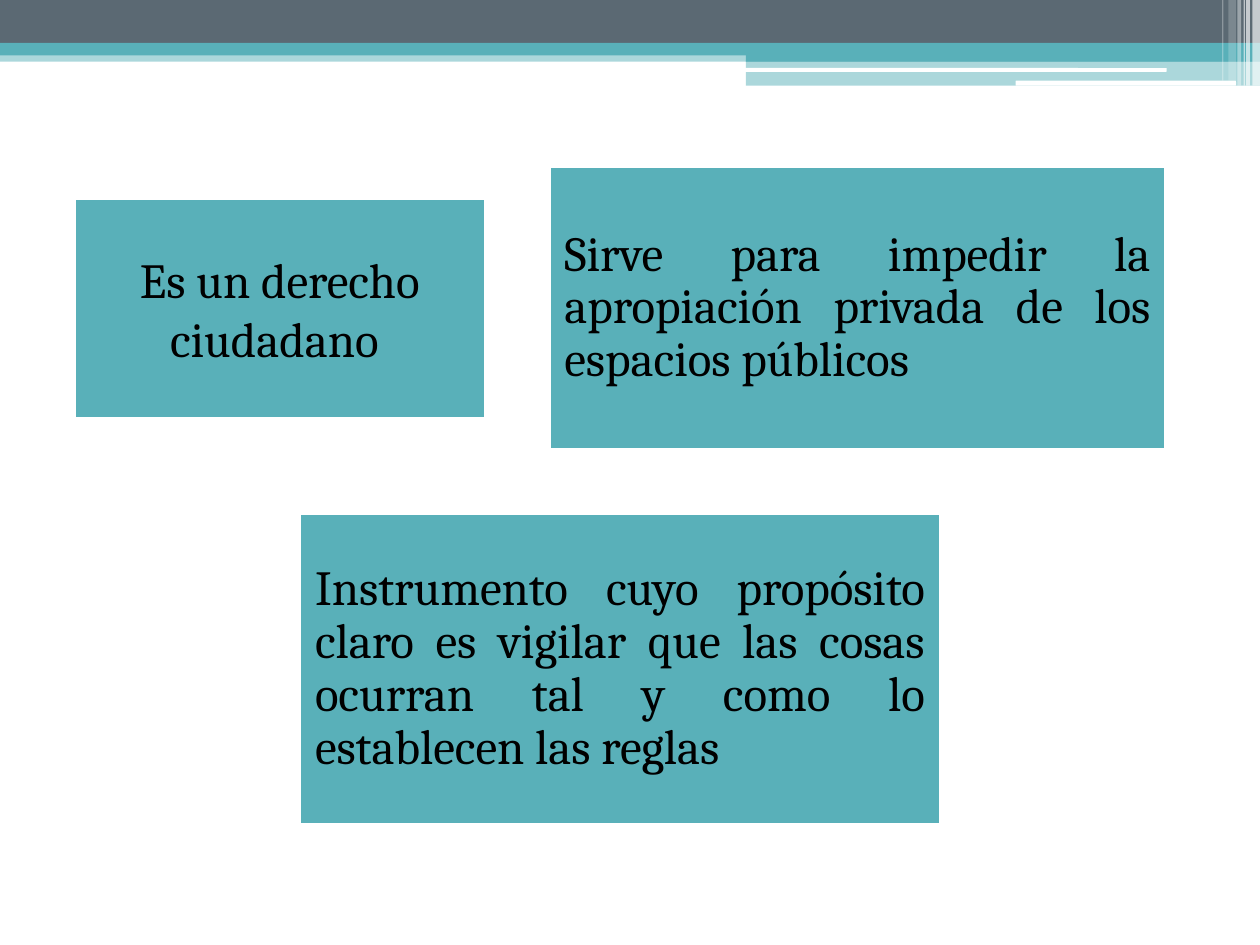
from lxml import etree
from pptx import Presentation
from pptx.dml.color import RGBColor
from pptx.enum.shapes import MSO_SHAPE
from pptx.enum.text import MSO_ANCHOR, PP_ALIGN
from pptx.oxml.ns import qn
from pptx.util import Inches, Pt

RECT, ROUNDED = MSO_SHAPE.RECTANGLE, MSO_SHAPE.ROUNDED_RECTANGLE
CENTER, JUSTIFY = PP_ALIGN.CENTER, PP_ALIGN.JUSTIFY
MIDDLE = MSO_ANCHOR.MIDDLE

TEAL = RGBColor(0x59, 0xB0, 0xB9)
SLATE = RGBColor(0x5B, 0x69, 0x73)
WHITE = RGBColor(0xFF, 0xFF, 0xFF)
BLACK = RGBColor(0x00, 0x00, 0x00)

# Header bands: preset, left, top, width, height, colour, opacity in percent
BANDS = [
    (RECT, 0, 0.4, 10, 0.09, TEAL, 50),
    (RECT, 0, 0, 10, 0.34, SLATE, 100),
    (RECT, 0, 0.34, 10, 0.1, TEAL, 100),
    (RECT, 5.92, 0.39, 4.08, 0.1, TEAL, 100),
    (RECT, 5.92, 0.48, 4.08, 0.2, TEAL, 50),
    (ROUNDED, 5.91, 0.54, 3.35, 0.03, WHITE, 100),
    (ROUNDED, 8.06, 0.64, 1.75, 0.04, WHITE, 100),
]

# Light stripes at the right edge: left, width, height, opacity in percent
STRIPES = [
    (9.94, 0.06, 0.68, 65),
    (9.89, 0.03, 0.68, 65),
    (9.87, 0.01, 0.68, 60),
    (9.82, 0.03, 0.68, 40),
    (9.75, 0.06, 0.64, 20),
    (9.7, 0.01, 0.64, 30),
]

# Statements: left, top, width, height, alignment, line spacing, text
STATEMENTS = [
    (0.59, 1.58, 3.26, 1.74, CENTER, 1.0, "Es un derecho ciudadano "),
    (4.36, 1.32, 4.89, 2.25, JUSTIFY, 0.9,
     "Sirve para impedir la apropiación privada de los espacios públicos"),
    (2.38, 4.08, 5.08, 2.46, JUSTIFY, 0.9,
     "Instrumento cuyo propósito claro es vigilar que las cosas ocurran "
     "tal y como lo establecen las reglas"),
]
INSET = Inches(0.12)


def add_block(slide, preset, left, top, width, height, colour, opacity=100):
    block = slide.shapes.add_shape(
        preset, Inches(left), Inches(top), Inches(width), Inches(height))
    block.shadow.inherit = False
    block.fill.solid()
    block.fill.fore_color.rgb = colour
    block.line.fill.background()
    if opacity < 100:
        tint = block.fill._xPr.find(qn("a:solidFill"))[0]
        etree.SubElement(tint, qn("a:alpha"), val=str(opacity * 1000))
    return block


def add_statement(slide, left, top, width, height, alignment, spacing, text):
    statement = add_block(slide, RECT, left, top, width, height, TEAL)
    statement.line.color.rgb = WHITE
    statement.line.width = Pt(1.5)
    frame = statement.text_frame
    frame.word_wrap = True
    frame.vertical_anchor = MIDDLE
    frame.margin_left = frame.margin_right = INSET
    frame.margin_top = frame.margin_bottom = INSET
    frame.text = text
    paragraph = frame.paragraphs[0]
    paragraph.alignment = alignment
    paragraph.line_spacing = spacing
    font = paragraph.runs[0].font
    font.name = "Cambria"
    font.size = Pt(28)
    font.color.rgb = BLACK


def main():
    deck = Presentation()
    deck.slide_width, deck.slide_height = Inches(10), Inches(7.5)
    slide = deck.slides.add_slide(deck.slide_layouts[6])

    # Header
    for band in BANDS:
        add_block(slide, *band)
    for left, width, height, opacity in STRIPES:
        add_block(slide, RECT, left, 0, width, height, WHITE, opacity)

    # Statements
    for statement in STATEMENTS:
        add_statement(slide, *statement)

    deck.save("out.pptx")


if __name__ == "__main__":
    main()
